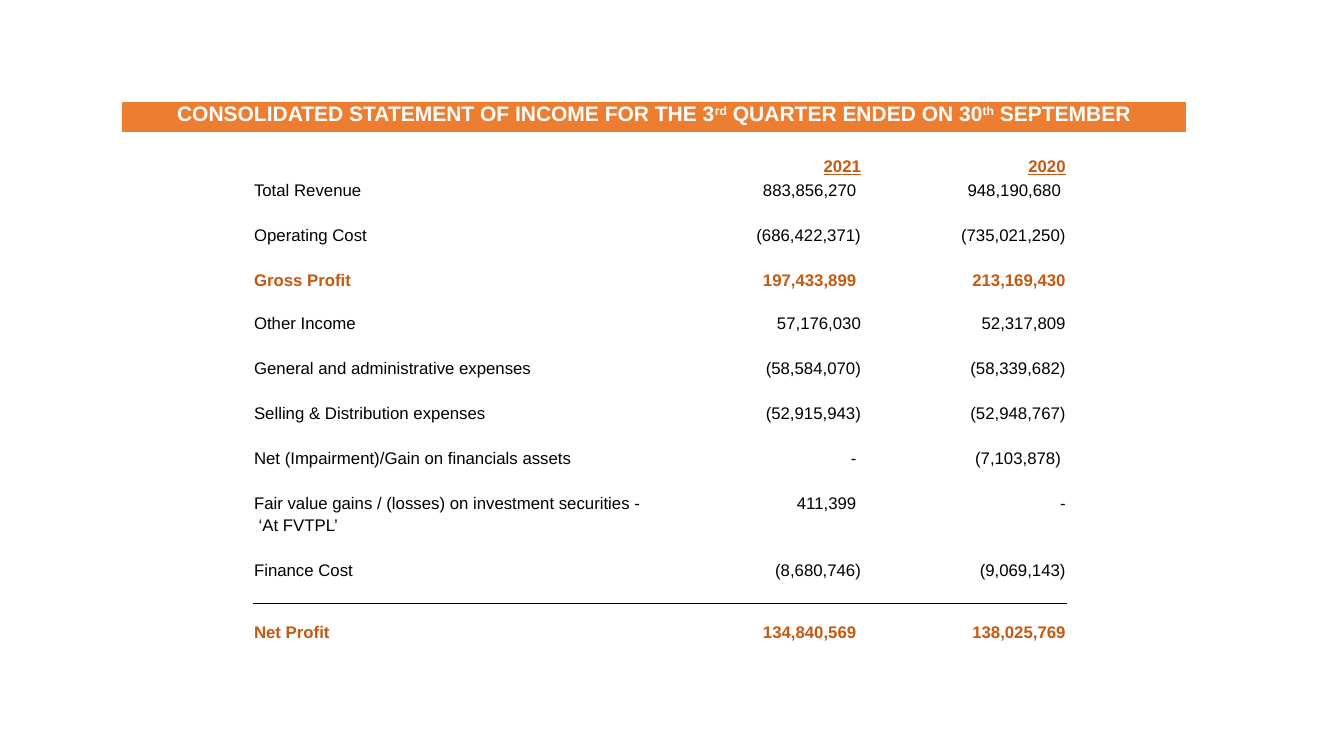
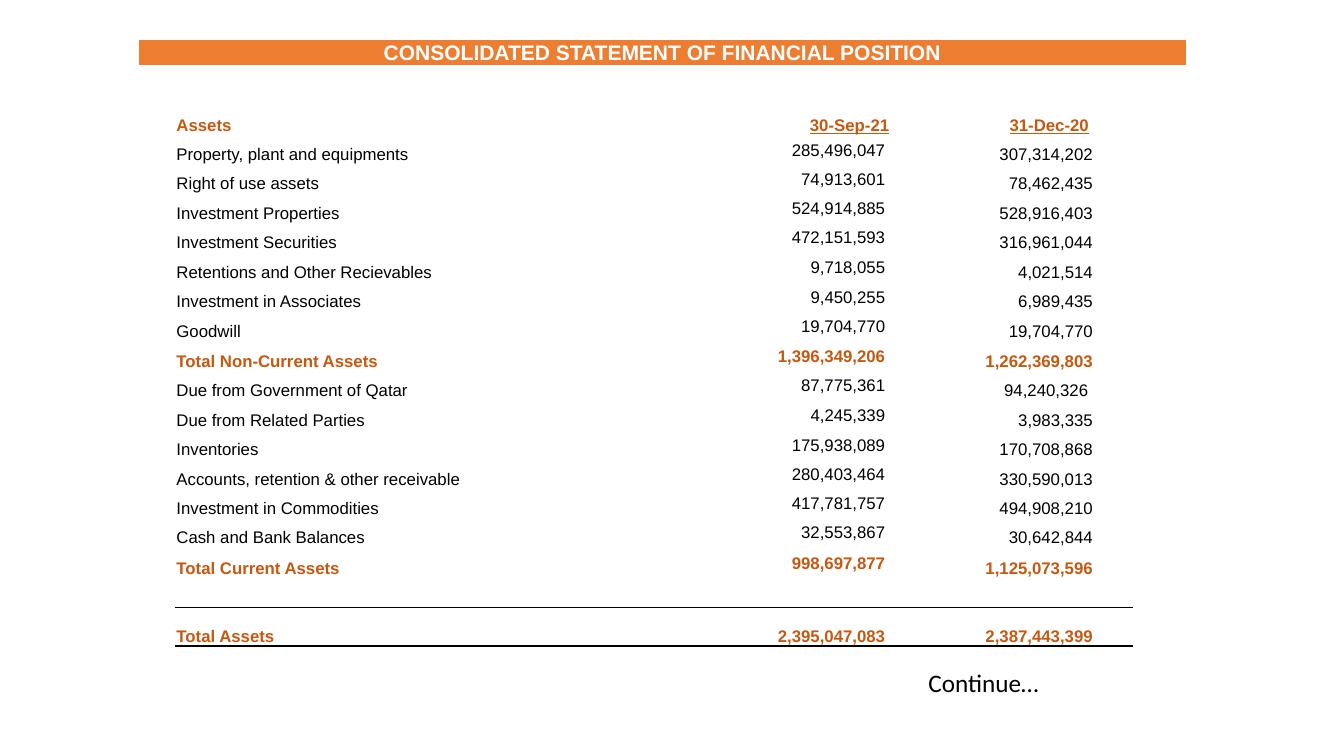
from lxml import etree
from pptx import Presentation
from pptx.dml.color import RGBColor
from pptx.enum.text import MSO_ANCHOR, PP_ALIGN
from pptx.oxml.ns import qn
from pptx.util import Inches, Pt

LEFT, CENTER, RIGHT = PP_ALIGN.LEFT, PP_ALIGN.CENTER, PP_ALIGN.RIGHT
TOP, MIDDLE, BOTTOM = MSO_ANCHOR.TOP, MSO_ANCHOR.MIDDLE, MSO_ANCHOR.BOTTOM

COLORS = {"band": "ED7D31", "accent": "C65911", "text": "000000", "light": "FFFFFF"}
FONT = "Arial"
BLANK_LAYOUT = 6
PLAIN_TABLE_STYLE = "{2D5ABB26-0587-4C30-8999-92F81FD0307C}"
INSET = 0.01

# Row kinds: "head", "item", "total" or "gap"
INCOME_ROWS = [
    ("head", 0.23, "", "2021", "2020"),
    ("item", 0.23, "Total Revenue", "883,856,270 ", "948,190,680 "),
    ("gap", 0.23),
    ("item", 0.22, "Operating Cost", "(686,422,371)", "(735,021,250)"),
    ("gap", 0.23),
    ("total", 0.22, "Gross Profit", "197,433,899 ", "213,169,430"),
    ("gap", 0.21),
    ("item", 0.22, "Other Income", "57,176,030", "52,317,809"),
    ("gap", 0.22),
    ("item", 0.22, "General and administrative expenses", "(58,584,070)", "(58,339,682)"),
    ("gap", 0.23),
    ("item", 0.22, "Selling & Distribution expenses", "(52,915,943)", "(52,948,767)"),
    ("gap", 0.23),
    ("item", 0.22, "Net (Impairment)/Gain on financials assets", "- ", "(7,103,878) "),
    ("gap", 0.22),
    ("item", 0.22, "Fair value gains / (losses) on investment securities -", "411,399 ", "-"),
    ("item", 0.22, " ‘At FVTPL’", "", ""),
    ("gap", 0.23),
    ("item", 0.22, "Finance Cost", "(8,680,746)", "(9,069,143)"),
    ("gap", 0.23),
    ("total", 0.38, "Net Profit", "134,840,569 ", "138,025,769"),
    ("gap", 0.21),
]

POSITION_ROWS = [
    ("head", 0.31, "Assets", "30-Sep-21", "31-Dec-20"),
    ("item", 0.29, "Property, plant and equipments", "285,496,047", "307,314,202"),
    ("item", 0.29, "Right of use assets", "74,913,601", "78,462,435"),
    ("item", 0.29, "Investment Properties", "524,914,885", "528,916,403"),
    ("item", 0.29, "Investment Securities", "472,151,593", "316,961,044"),
    ("item", 0.3, "Retentions and Other Recievables", "9,718,055", "4,021,514"),
    ("item", 0.29, "Investment in Associates", "9,450,255", "6,989,435"),
    ("item", 0.29, "Goodwill", "19,704,770", "19,704,770"),
    ("total", 0.3, "Total Non-Current Assets", "1,396,349,206", "1,262,369,803"),
    ("item", 0.29, "Due from Government of Qatar", "87,775,361", "94,240,326 "),
    ("item", 0.3, "Due from Related Parties", "4,245,339", "3,983,335"),
    ("item", 0.29, "Inventories", "175,938,089", "170,708,868"),
    ("item", 0.29, "Accounts, retention & other receivable", "280,403,464", "330,590,013"),
    ("item", 0.29, "Investment in Commodities", "417,781,757", "494,908,210"),
    ("item", 0.29, "Cash and Bank Balances", "32,553,867", "30,642,844"),
    ("total", 0.31, "Total Current Assets", "998,697,877", "1,125,073,596"),
    ("gap", 0.29),
    ("total", 0.38, "Total Assets", "2,395,047,083", "2,387,443,399"),
]


def color(name):
    return RGBColor.from_string(COLORS[name])


def add_text(paragraph, text, size=12, font=FONT, fill="text", bold=False,
             underline=False, superscript=False, align=LEFT):
    paragraph.alignment = align
    run = paragraph.add_run()
    run.text = text
    run.font.size = Pt(size)
    run.font.name = font
    run.font.bold = bold
    run.font.underline = underline
    run.font.color.rgb = color(fill)
    if superscript:
        run._r.get_or_add_rPr().set("baseline", "30000")


def set_borders(cell, top=None, bottom=None):
    """Widths in points; a side without a width gets no line."""
    properties = cell._tc.get_or_add_tcPr()
    sides = (("L", None), ("R", None), ("T", top), ("B", bottom))
    for index, (side, points) in enumerate(sides):
        line = etree.Element(qn("a:ln" + side))
        if points:
            line.set("w", str(Pt(points)))
            solid = etree.SubElement(line, qn("a:solidFill"))
            etree.SubElement(solid, qn("a:srgbClr"), val=COLORS["text"])
        else:
            etree.SubElement(line, qn("a:noFill"))
        properties.insert(index, line)


def set_insets(cell, right=INSET):
    cell.margin_left = cell.margin_top = Inches(INSET)
    cell.margin_right, cell.margin_bottom = Inches(right), 0


def add_plain_table(slide, left, top, widths, heights):
    frame = slide.shapes.add_table(len(heights), len(widths), Inches(left), Inches(top),
                                   Inches(sum(widths)), Inches(sum(heights)))
    table = frame.table
    table.first_row = table.horz_banding = False
    table._tbl.tblPr.find(qn("a:tableStyleId")).text = PLAIN_TABLE_STYLE
    for column, width in zip(table.columns, widths):
        column.width = Inches(width)
    for row, height in zip(table.rows, heights):
        row.height = Inches(height)
    return table


def add_title_band(slide, left, top, width, height, parts):
    """Parts at odd places are superscript."""
    cell = add_plain_table(slide, left, top, [width], [height]).cell(0, 0)
    cell.fill.solid()
    cell.fill.fore_color.rgb = color("band")
    cell.vertical_anchor = TOP
    set_insets(cell)
    for index, part in enumerate(parts):
        add_text(cell.text_frame.paragraphs[0], part, size=15, fill="light", bold=True,
                 superscript=index % 2 == 1, align=CENTER)


def add_statement(slide, left, top, widths, rows, rules, insets, head_insets,
                  middle_column=None):
    """Rules maps a row to the width of the line below it."""
    table = add_plain_table(slide, left, top, widths, [row[1] for row in rows])
    for row_index, (kind, _, *texts) in enumerate(rows):
        right_insets = head_insets if kind == "head" else insets
        strong = kind in ("head", "total")
        ruled = row_index in rules
        for index, text in enumerate(texts or [""] * len(widths)):
            cell = table.cell(row_index, index)
            cell.fill.background()
            set_borders(cell, rules.get(row_index - 1), rules.get(row_index))
            centred = index == middle_column and kind != "head" and not ruled
            cell.vertical_anchor = MIDDLE if centred else BOTTOM
            set_insets(cell, right_insets[index])
            paragraph = cell.text_frame.paragraphs[0]
            if text:
                add_text(paragraph, text, bold=strong, fill="accent" if strong else "text",
                         underline=kind == "head" and index > 0,
                         align=RIGHT if index else LEFT)
            else:
                # Keeps an empty cell from stretching its row
                etree.SubElement(paragraph._p, qn("a:endParaRPr"), sz="1000")


def add_continue_note(slide, left, top, width, height):
    note = slide.shapes.add_textbox(Inches(left), Inches(top), Inches(width), Inches(height))
    note.text_frame.word_wrap = True
    paragraph = note.text_frame.paragraphs[0]
    paragraph.line_spacing = 0.9
    add_text(paragraph, "Continue…", size=18, font="Calibri")


def build_income_slide(slide):
    add_title_band(slide, 1.21, 1.01, 10.55, 0.3,
                   ["CONSOLIDATED STATEMENT OF INCOME FOR THE 3", "rd",
                    " QUARTER ENDED ON 30", "th", " SEPTEMBER"])
    insets = [INSET] * 3
    add_statement(slide, 2.51, 1.52, [4.4, 1.64, 2.03], INCOME_ROWS,
                  rules={len(INCOME_ROWS) - 3: 0.5}, insets=insets, head_insets=insets)


def build_position_slide(slide):
    add_title_band(slide, 1.38, 0.4, 10.38, 0.22,
                   ["CONSOLIDATED STATEMENT OF FINANCIAL POSITION"])
    last = len(POSITION_ROWS) - 1
    add_statement(slide, 1.74, 1.03, [5.17, 1.94, 2.39], POSITION_ROWS,
                  rules={last - 1: 0.5, last: 2}, insets=[INSET, 0.07, 0.4],
                  head_insets=[INSET, 0.03, 0.44], middle_column=1)
    add_continue_note(slide, 9.11, 6.61, 3.5, 0.3)


def main():
    presentation = Presentation()
    presentation.slide_width = Inches(13.33)
    presentation.slide_height = Inches(7.5)
    layout = presentation.slide_layouts[BLANK_LAYOUT]
    for build in (build_income_slide, build_position_slide):
        build(presentation.slides.add_slide(layout))
    presentation.save("out.pptx")


if __name__ == "__main__":
    main()
